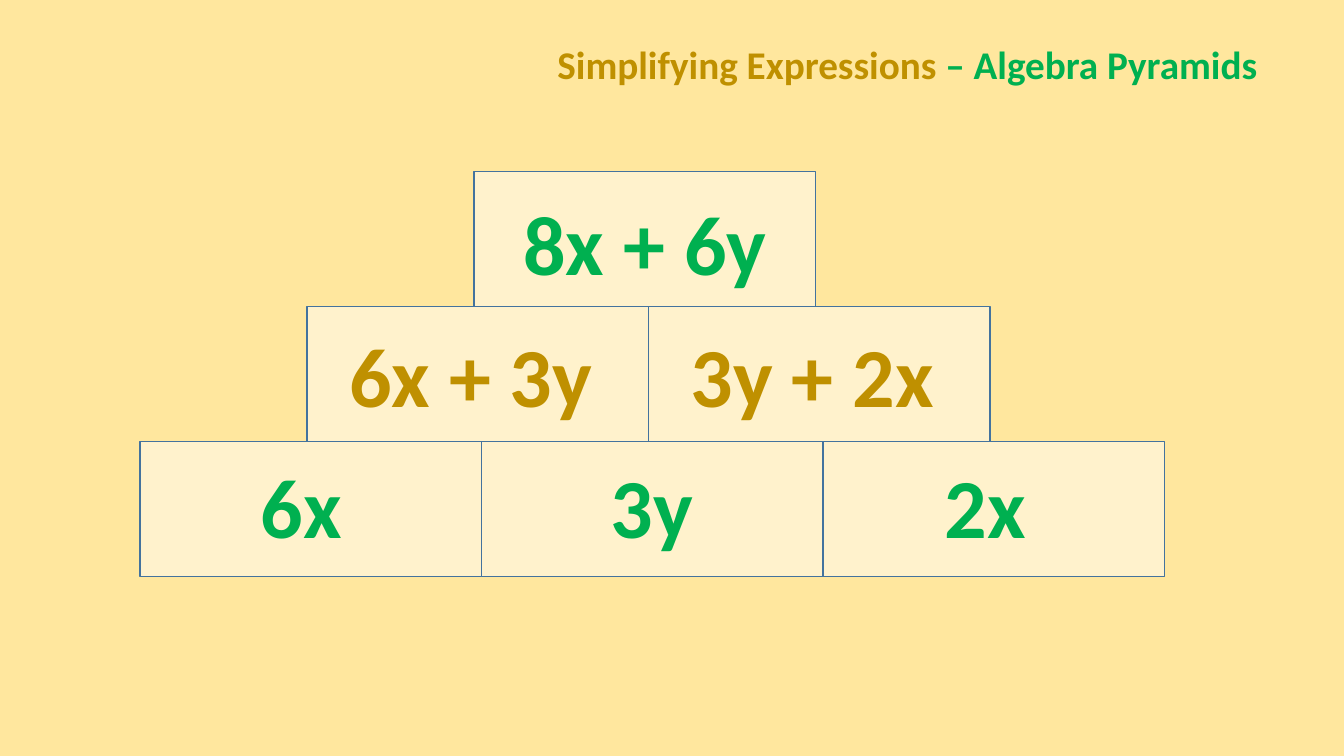
from dataclasses import dataclass

from pptx import Presentation
from pptx.dml.color import RGBColor as Color
from pptx.enum.shapes import MSO_SHAPE as Shape
from pptx.enum.text import MSO_ANCHOR as Anchor, MSO_AUTO_SIZE as AutoSize, PP_ALIGN as Align
from pptx.util import Pt


@dataclass(frozen=True)
class Theme:
    background: str = "FFE79E"
    brick: str = "FFF2CC"
    outline: str = "43739E"
    gold: str = "BF9000"
    green: str = "00B050"
    font: str = "Calibri"
    title_size: int = 28
    label_size: int = 60


@dataclass(frozen=True)
class Box:
    left: float
    top: float
    width: float
    height: float

    def lengths(self):
        return [Pt(value) for value in (self.left, self.top, self.width, self.height)]


THEME = Theme()
LABEL_HEIGHT = 80

# Each row: label colour, label drop, then (wording, label indent, label width).
ROWS = [
    (THEME.green, 10.8, [("8x + 6y", 28, 232.6)]),
    (THEME.gold, 8.6, [("6x + 3y", 23, 201.6), ("3y + 2x", 23, 226.8)]),
    (THEME.green, 5.8, [("6x", 79.2, 113), ("3y", 85.3, 113), ("2x", 79.9, 113)]),
]


def style_span(span, size, color):
    span.font.name = THEME.font
    span.font.size = Pt(size)
    span.font.bold = True
    span.font.color.rgb = Color.from_string(color)


def add_title(page, box):
    frame = page.shapes.add_textbox(*box.lengths()).text_frame
    frame.word_wrap = True
    frame.vertical_anchor = Anchor.MIDDLE
    para = frame.paragraphs[0]
    para.alignment = Align.RIGHT
    for wording, color in (
        ("Simplifying Expressions ", THEME.gold),
        ("– Algebra Pyramids", THEME.green),
    ):
        span = para.add_run()
        span.text = wording
        style_span(span, THEME.title_size, color)


def add_brick(page, box):
    brick = page.shapes.add_shape(Shape.RECTANGLE, *box.lengths())
    brick.shadow.inherit = False
    brick.fill.solid()
    brick.fill.fore_color.rgb = Color.from_string(THEME.brick)
    brick.line.color.rgb = Color.from_string(THEME.outline)
    brick.line.width = Pt(1)


def add_label(page, box, wording, color):
    frame = page.shapes.add_textbox(*box.lengths()).text_frame
    frame.word_wrap = True
    frame.auto_size = AutoSize.SHAPE_TO_FIT_TEXT
    frame.text = wording
    style_span(frame.paragraphs[0].runs[0], THEME.label_size, color)


def add_pyramid(page, box):
    base = len(ROWS)
    width = box.width / base
    height = box.height / base
    row_shift = 119.3
    for level, (color, drop, labels) in enumerate(ROWS):
        row_left = box.left + row_shift * (base - 1 - level)
        top = box.top + level * height
        for column, (wording, indent, label_width) in enumerate(labels):
            left = row_left + column * width
            add_brick(page, Box(left, top, width, height))
            label_box = Box(left + indent, top + drop, label_width, LABEL_HEIGHT)
            add_label(page, label_box, wording, color)


def main():
    deck = Presentation()
    deck.slide_width, deck.slide_height = Pt(960), Pt(540)
    page = deck.slides.add_slide(deck.slide_layouts[6])
    page.background.fill.solid()
    page.background.fill.fore_color.rgb = Color.from_string(THEME.background)
    add_title(page, Box(286.6, 8.6, 618.5, 74.2))
    add_pyramid(page, Box(100, 122.4, 731.7, 289.5))
    deck.save("out.pptx")


if __name__ == "__main__":
    main()
